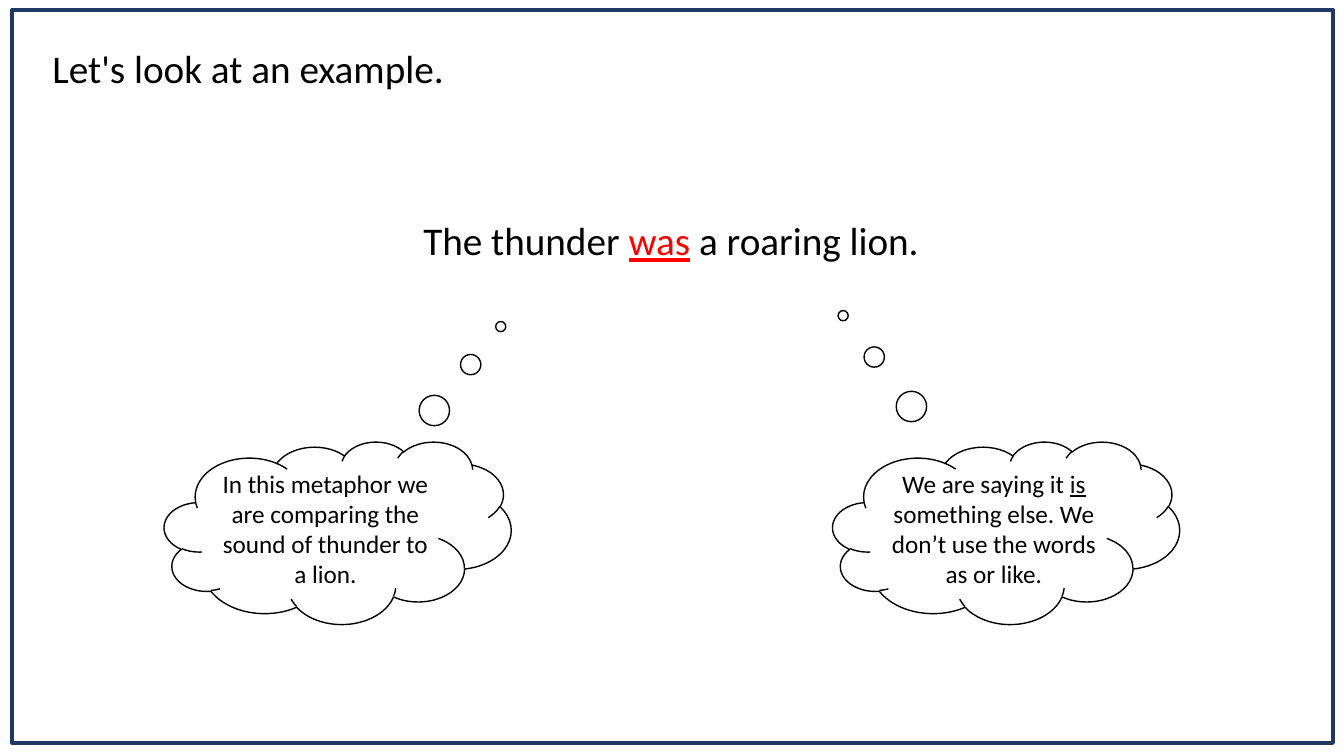
from pptx import Presentation
from pptx.dml.color import RGBColor
from pptx.enum.shapes import MSO_SHAPE as Kind
from pptx.enum.text import MSO_ANCHOR as Anchor, MSO_AUTO_SIZE as Fit, PP_ALIGN as Align
from pptx.util import Pt

SCALE = 9144  # EMU per px, 100 px to the inch
INK, RED, NAVY = "000000", "FF0000", "203864"


def px(*vals):
    return [val * SCALE for val in vals]


def paint(color, code):
    color.rgb = RGBColor.from_string(code)


class Page:
    """Style and current slide, with one method per kind of element."""
    face = "Calibri"

    def __init__(self, deck):
        self.slide = deck.slides.add_slide(deck.slide_layouts[5])
        self.shapes = self.slide.shapes

    def words(self, frame, parts, size, align):
        """Fill a frame with runs given as (text, colour, underlined)."""
        para = frame.paragraphs[0]
        para.alignment = align
        for text, code, under in parts:
            run = para.add_run()
            run.text = text
            font = run.font
            font.name, font.size, font.underline = self.face, Pt(size), under
            paint(font.color, code)

    def line(self, box, parts):
        """Set one unwrapped line of large text in a box."""
        frame = box.text_frame
        frame.word_wrap = False
        frame.auto_size = Fit.SHAPE_TO_FIT_TEXT
        frame.vertical_anchor = Anchor.TOP
        self.words(frame, parts, 28, Align.LEFT)

    def title(self, text, *area):
        box = self.shapes.title
        box.left, box.top, box.width, box.height = px(*area)
        self.line(box, [(text, INK, False)])

    def label(self, parts, *area):
        self.line(self.shapes.add_textbox(*px(*area)), parts)

    def shape(self, kind, code, weight, *area):
        item = self.shapes.add_shape(kind, *px(*area))
        item.shadow.inherit = False
        item.fill.background()
        paint(item.line.color, code)
        item.line.width = Pt(weight)
        return item

    def cloud(self, parts, left, tail):
        item = self.shape(Kind.CLOUD_CALLOUT, INK, 1, left, 438, 344, 181)
        item.adjustments[0], item.adjustments[1] = tail
        frame = item.text_frame
        frame.word_wrap = True
        frame.vertical_anchor = Anchor.MIDDLE
        self.words(frame, parts, 18, Align.CENTER)


def main():
    deck = Presentation()
    deck.slide_width, deck.slide_height = px(1333, 750)
    page = Page(deck)
    page.shape(Kind.RECTANGLE, NAVY, 3, 12, 10, 1310, 727)
    page.title("Let's look at an example.", 42, 39, 412, 57)
    page.label([("The thunder ", INK, False), ("was", RED, True),
                (" a roaring lion.", INK, False)], 410, 210, 517, 57)
    page.cloud([("In this metaphor we are comparing the sound of thunder to a lion.",
                 INK, False)], 163, (0.47, -1.13))
    page.cloud([("We are saying it ", INK, False), ("is", INK, True),
                (" something else. We don’t use the words as or like.", INK, False)],
               826, (-0.47, -1.19))
    deck.save("out.pptx")


if __name__ == "__main__":
    main()
